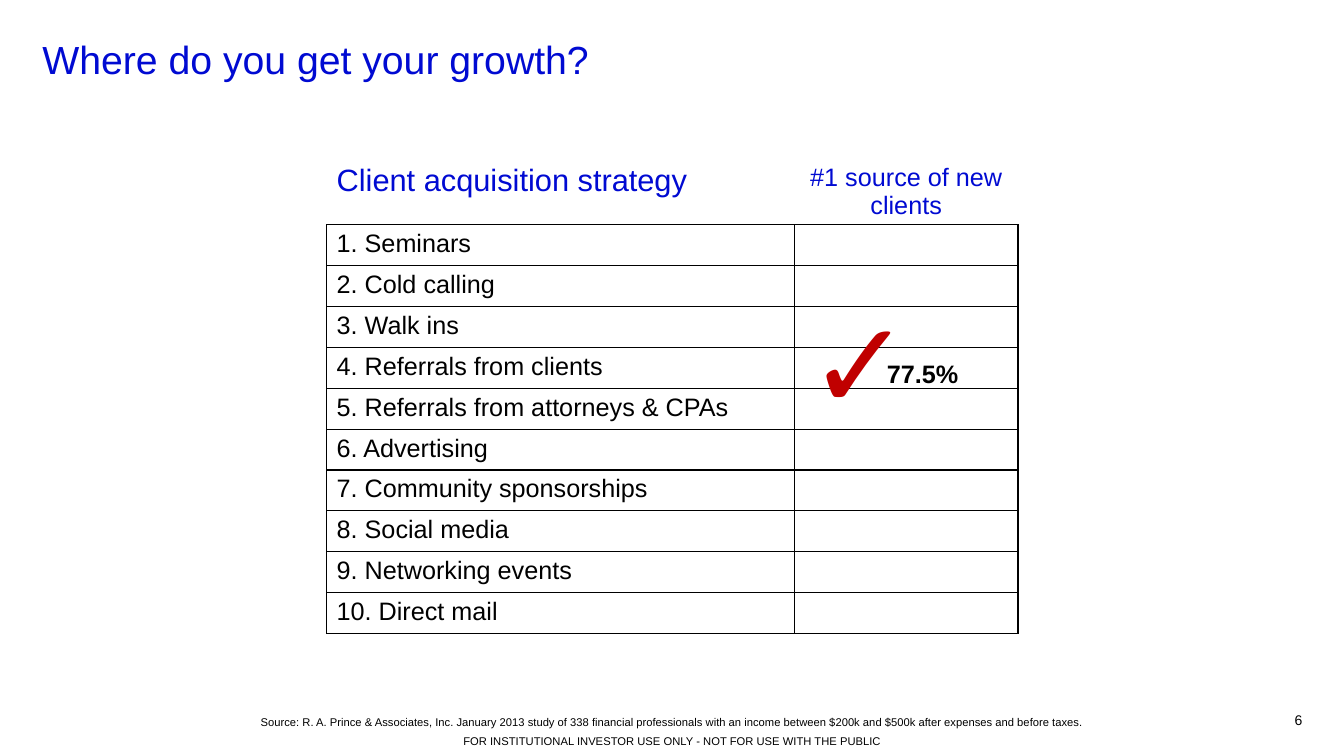
import pptx
import pptx.dml.color
import pptx.enum.text
import pptx.oxml
import pptx.oxml.ns
import pptx.util

BLUE = pptx.dml.color.RGBColor(0x00, 0x0A, 0xD2)
RED = pptx.dml.color.RGBColor(0xC0, 0x00, 0x00)
BLACK = pptx.dml.color.RGBColor(0x00, 0x00, 0x00)
WHITE = pptx.dml.color.RGBColor(0xFF, 0xFF, 0xFF)
ALIGN = pptx.enum.text.PP_ALIGN
ANCHOR = pptx.enum.text.MSO_ANCHOR

SLIDE_WIDTH = pptx.util.Inches(13.33)
SLIDE_HEIGHT = pptx.util.Inches(7.5)

STRATEGIES = [
    "Seminars", "Cold calling", "Walk ins", "Referrals from clients",
    "Referrals from attorneys & CPAs", "Advertising",
    "Community sponsorships", "Social media", "Networking events",
    "Direct mail",
]


def across(percent):
    return round(SLIDE_WIDTH * percent / 100)


def down(percent):
    return round(SLIDE_HEIGHT * percent / 100)


def area(left, top, width, height):
    """Turn percentages of the slide into a position and size."""
    return across(left), down(top), across(width), down(height)


def write(text_frame, text, size, color=BLACK, bold=False, align=ALIGN.LEFT):
    paragraph = text_frame.paragraphs[0]
    paragraph.alignment = align
    run = paragraph.add_run()
    run.text = text
    run.font.name = "Arial"
    run.font.size = pptx.util.Pt(size)
    run.font.bold = bold
    run.font.color.rgb = color


def clear_margins(text_frame):
    text_frame.margin_left = text_frame.margin_right = 0
    text_frame.margin_top = text_frame.margin_bottom = 0


def add_title(slide, text):
    title = slide.shapes.title
    title.left, title.top, title.width, title.height = area(3.15, 4.67, 93.68, 6.27)
    clear_margins(title.text_frame)
    title.text_frame.vertical_anchor = ANCHOR.BOTTOM
    write(title.text_frame, text, 28, BLUE)


def add_small_print(slide, position, text, size, align=ALIGN.CENTER, wrap=True):
    text_frame = slide.shapes.add_textbox(*position).text_frame
    text_frame.word_wrap = wrap
    clear_margins(text_frame)
    write(text_frame, text, size, align=align)


def add_mark(group, position, text, size, color):
    text_frame = group.shapes.add_textbox(*position).text_frame
    text_frame.word_wrap = False
    write(text_frame, text, size, color, bold=True)


def format_cell(cell, outer_color):
    """Fill the cell white; outer_color applies to all sides but the bottom."""
    properties = cell._tc.get_or_add_tcPr()
    sides = {"L": outer_color, "R": outer_color, "T": outer_color, "B": BLACK}
    for side, color in sides.items():
        properties.append(pptx.oxml.parse_xml(
            f'<a:ln{side} {pptx.oxml.ns.nsdecls("a")} w="{pptx.util.Pt(1)}">'
            f'<a:solidFill><a:srgbClr val="{color}"/></a:solidFill></a:ln{side}>'
        ))
    cell.fill.solid()
    cell.fill.fore_color.rgb = WHITE


def add_strategy_table(slide):
    column_widths = [34.8, 16.65]
    header_height, row_height = 8.67, 5.41
    row_count = len(STRATEGIES) + 1
    position = area(24.3, 20.93, sum(column_widths),
                    header_height + row_height * len(STRATEGIES))
    table = slide.shapes.add_table(row_count, len(column_widths), *position).table
    table.first_row = False
    table.horz_banding = False
    for column, width in zip(table.columns, column_widths):
        column.width = across(width)
    for index, row in enumerate(table.rows):
        row.height = down(row_height if index else header_height)
        for cell in row.cells:
            format_cell(cell, BLACK if index else WHITE)

    write(table.cell(0, 0).text_frame, "Client acquisition strategy", 22, BLUE)
    write(table.cell(0, 1).text_frame, "#1 source of new clients", 18, BLUE,
          align=ALIGN.CENTER)
    for number, strategy in enumerate(STRATEGIES, start=1):
        write(table.cell(number, 0).text_frame, f"{number}. {strategy}", 18)


def main():
    presentation = pptx.Presentation()
    presentation.slide_width = SLIDE_WIDTH
    presentation.slide_height = SLIDE_HEIGHT
    title_only = presentation.slide_layouts[5]
    slide = presentation.slides.add_slide(title_only)

    add_title(slide, "Where do you get your growth?")
    add_strategy_table(slide)

    top_source = slide.shapes.add_group_shape()
    add_mark(top_source, area(59.4, 37.2, 8.63, 21.07), "✓", 88, RED)
    add_mark(top_source, area(65.25, 46.8, 6.9, 5.33), "77.5%", 18, BLACK)

    add_small_print(slide, area(93, 94.13, 3.9, 2.67), "6", 10, ALIGN.RIGHT)
    add_small_print(slide, area(17.18, 97.2, 65.7, 1.73),
                    "FOR INSTITUTIONAL INVESTOR USE ONLY - NOT FOR USE WITH THE PUBLIC", 8)
    add_small_print(slide, area(18.98, 94.67, 62.1, 1.73),
                    "Source: R. A. Prince & Associates, Inc. January 2013 study of 338 "
                    "financial professionals with an income between $200k and $500k "
                    "after expenses and before taxes.", 8, wrap=False)
    presentation.save("out.pptx")


if __name__ == "__main__":
    main()
